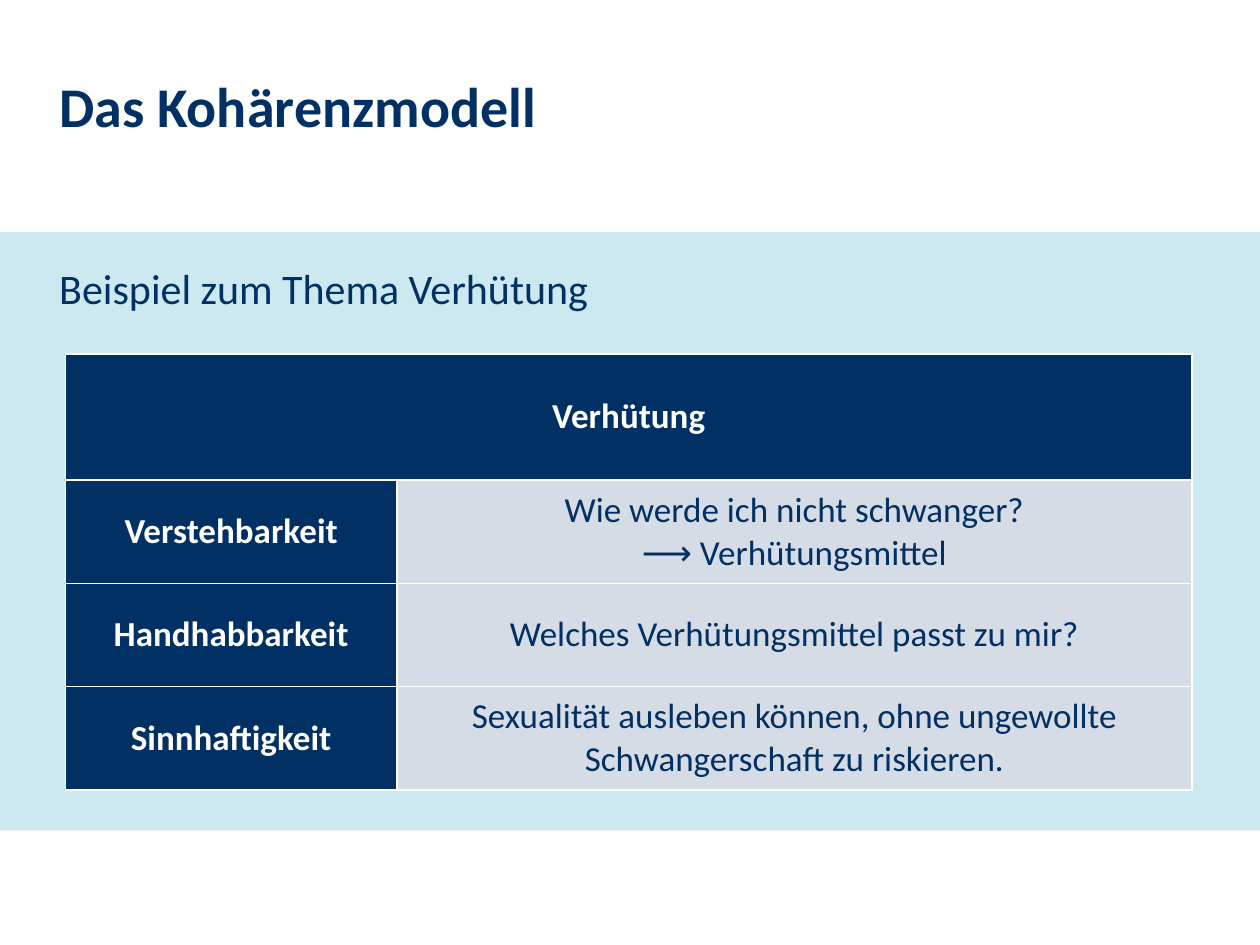
from lxml import etree
from pptx import Presentation
from pptx.dml.color import RGBColor
from pptx.enum.shapes import MSO_SHAPE
from pptx.enum.text import MSO_ANCHOR, MSO_AUTO_SIZE, PP_ALIGN
from pptx.oxml.ns import qn
from pptx.util import Inches, Pt

RECTANGLE = MSO_SHAPE.RECTANGLE
TOP, MIDDLE = MSO_ANCHOR.TOP, MSO_ANCHOR.MIDDLE
NO_AUTOFIT = MSO_AUTO_SIZE.NONE
LEFT, CENTER = PP_ALIGN.LEFT, PP_ALIGN.CENTER
TITLE_AND_CONTENT = 1

COLORS = {"navy": "003064", "band": "CCE9F2", "cell": "D6DCE5", "white": "FFFFFF"}
WIDTH, HEIGHT = 10, 7.5


def color(name):
    return RGBColor.from_string(COLORS[name])


def write(frame, text, size=20, ink="navy", bold=False, align=LEFT, anchor=TOP):
    frame.word_wrap = True
    frame.vertical_anchor = anchor
    frame.text = text
    for para in frame.paragraphs:
        properties = para._p.get_or_add_pPr()
        properties.set("marL", "0")
        properties.set("indent", "0")
        etree.SubElement(properties, qn("a:buNone"))
        para.alignment = align
        para.space_before = Pt(0)
        for span in para.runs:
            span.font.name = "Calibri"
            span.font.size = Pt(size)
            span.font.bold = bold
            span.font.color.rgb = color(ink)


class SlideBuilder:
    def __init__(self, deck):
        self.page = deck.slides.add_slide(deck.slide_layouts[TITLE_AND_CONTENT])

    def area(self, left, top, width, height):
        return [Inches(share * side) for share, side in
                zip((left, top, width, height), (WIDTH, HEIGHT) * 2)]

    def band(self, top, height):
        box = self.page.shapes.add_shape(RECTANGLE, *self.area(0, top, 1, height))
        box.shadow.inherit = False
        box.fill.solid()
        box.fill.fore_color.rgb = color("band")
        box.line.fill.background()
        self.page.shapes._spTree.insert(2, box._element)

    def placeholder(self, index, text, area, **style):
        box = self.page.placeholders[index]
        box.left, box.top, box.width, box.height = self.area(*area)
        write(box.text_frame, text, **style)
        box.text_frame.auto_size = NO_AUTOFIT

    def borders(self, cell):
        properties = cell._tc.get_or_add_tcPr()
        for position, side in enumerate(("lnL", "lnR", "lnT", "lnB")):
            line = etree.Element(qn(f"a:{side}"), w=str(Pt(0.96)))
            fill = etree.SubElement(line, qn("a:solidFill"))
            etree.SubElement(fill, qn("a:srgbClr"), val=COLORS["white"])
            properties.insert(position, line)

    def cell(self, cell, text, heading):
        cell.fill.solid()
        cell.fill.fore_color.rgb = color("navy" if heading else "cell")
        cell.vertical_anchor = MIDDLE
        write(cell.text_frame, text, ink="white" if heading else "navy",
              bold=heading, align=CENTER, anchor=MIDDLE)
        self.borders(cell)

    def table(self, rows, area, column_widths, row_heights):
        frame = self.page.shapes.add_table(len(rows), len(column_widths), *self.area(*area))
        table = frame.table
        for column, width in zip(table.columns, column_widths):
            column.width = Inches(width * WIDTH)
        for row, height in zip(table.rows, row_heights):
            row.height = Inches(height * HEIGHT)
        for row, texts in enumerate(rows):
            for column, text in enumerate(texts):
                self.cell(table.cell(row, column), text, heading=row == 0 or column == 0)
        table.cell(0, 0).merge(table.cell(0, len(column_widths) - 1))


def main():
    deck = Presentation()
    deck.slide_width, deck.slide_height = Inches(WIDTH), Inches(HEIGHT)
    slide = SlideBuilder(deck)
    slide.band(1.84 / HEIGHT, 4.75 / HEIGHT)
    slide.placeholder(0, "Das Kohärenzmodell",
                      (0.037, 0.52 / HEIGHT, 0.492, 0.76 / HEIGHT), size=32, bold=True)
    slide.placeholder(1, "Beispiel zum Thema Verhütung",
                      (0.037, 2.03 / HEIGHT, 0.938, 3.76 / HEIGHT), size=24)
    rows = [
        ("Verhütung", ""),
        ("Verstehbarkeit", "Wie werde ich nicht schwanger?\n⟶ Verhütungsmittel"),
        ("Handhabbarkeit", "Welches Verhütungsmittel passt zu mir?"),
        ("Sinnhaftigkeit",
         "Sexualität ausleben können, ohne ungewollte Schwangerschaft zu riskieren."),
    ]
    slide.table(rows, (0.052, 2.81 / HEIGHT, 0.894, 3.46 / HEIGHT),
                column_widths=(0.263, 0.631),
                row_heights=[1 / HEIGHT] + [0.82 / HEIGHT] * 3)
    deck.save("out.pptx")


if __name__ == "__main__":
    main()
